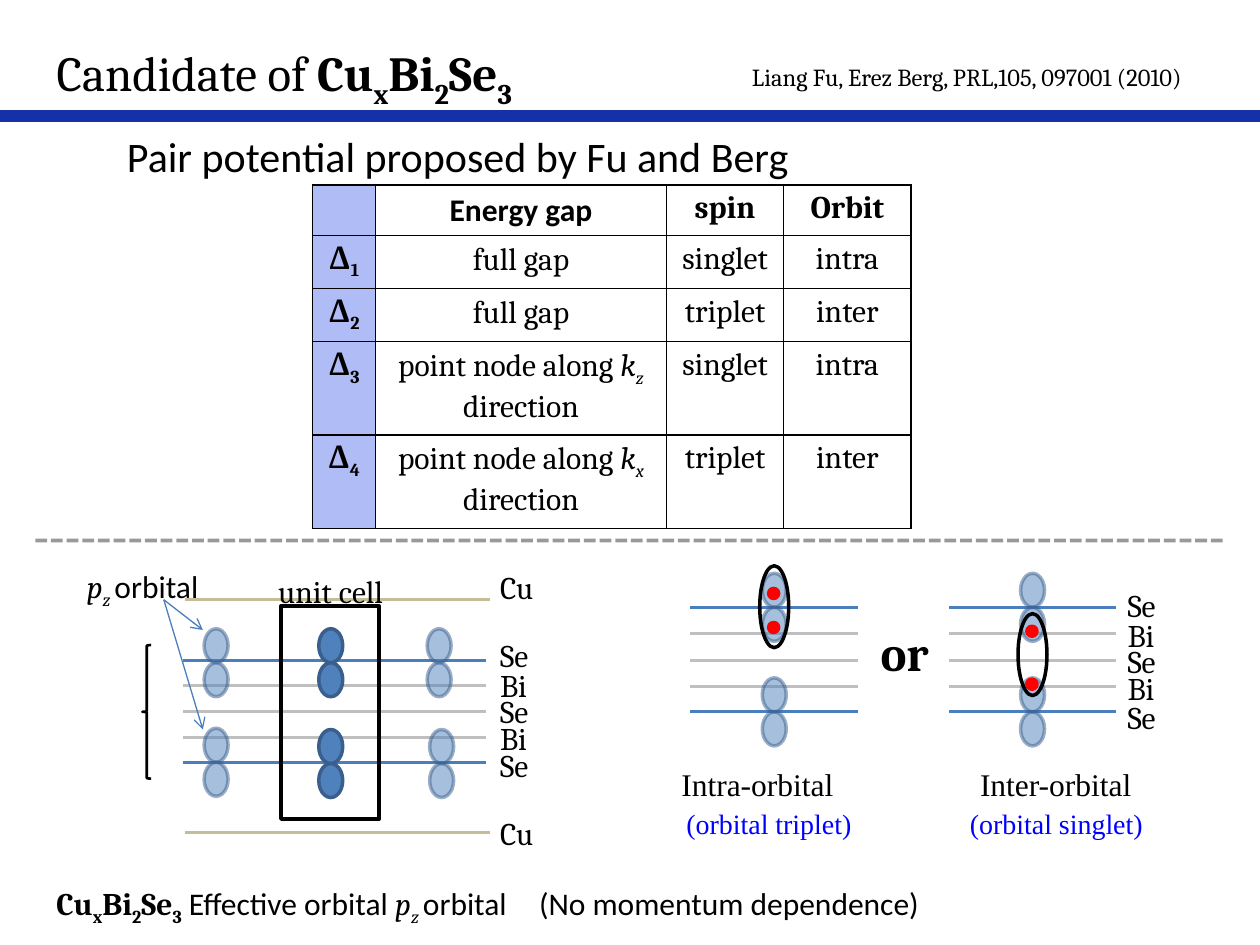
from lxml import etree
from pptx import Presentation
from pptx.dml.color import RGBColor
from pptx.enum.dml import MSO_LINE
from pptx.enum.shapes import MSO_CONNECTOR, MSO_SHAPE
from pptx.enum.text import MSO_ANCHOR, MSO_AUTO_SIZE, PP_ALIGN
from pptx.oxml.ns import qn
from pptx.util import Inches, Pt

STRAIGHT = MSO_CONNECTOR.STRAIGHT
OVAL, RECT, BRACE = MSO_SHAPE.OVAL, MSO_SHAPE.RECTANGLE, MSO_SHAPE.LEFT_BRACE
DASH = MSO_LINE.SQUARE_DOT
TOP, FIT = MSO_ANCHOR.TOP, MSO_AUTO_SIZE.SHAPE_TO_FIT_TEXT
LEFT, CENTER = PP_ALIGN.LEFT, PP_ALIGN.CENTER

COLORS = {
    "black": "000000", "bar": "1531A7", "head": "2247E4", "tan": "C4BD97",
    "gray": "BFBFBF", "blue": "4B7EBC", "lobe": "4F81BD", "edge": "3A5F8C",
    "red": "FF0000", "note": "0000FF", "dash": "404040",
}
SERIF, SANS, TIMES = "Cambria", "Calibri", "Times New Roman"

# A run is (text, style, font): b bold, i italic, s subscript
CRYSTAL = [("Cu", "b"), ("x", "bs"), ("Bi", "b"), ("2", "bs"), ("Se", "b"), ("3", "bs")]
PZ = [("p", "i"), ("z ", "is"), ("orbital", "", SANS)]
GAPS = [
    [("full gap",)],
    [("full gap",)],
    [("point node along ",), ("k", "i"), ("z ", "is"), ("direction",)],
    [("point node along ",), ("k", "i"), ("x ", "is"), ("direction",)],
]
KINDS = [("singlet", "intra"), ("triplet", "inter")] * 2


def rgb(name):
    return RGBColor.from_string(COLORS[name])


def fade(props, alpha):
    """Make every colour below the given properties see-through."""
    for clr in props.iter(qn("a:srgbClr")):
        etree.SubElement(clr, qn("a:alpha")).set("val", str(alpha * 1000))


def write(para, runs, size=18, color="black", font=SERIF):
    for text, *rest in runs:
        style = rest[0] if rest else ""
        run = para.add_run()
        run.text = text
        run.font.name = rest[1] if len(rest) > 1 else font
        run.font.size = Pt(size)
        run.font.bold, run.font.italic = "b" in style, "i" in style
        run.font.color.rgb = rgb(color)
        if "s" in style:
            run._r.get_or_add_rPr().set("baseline", "-25000")


def add_text(slide, box, runs, wrap=True, **look):
    frame = slide.shapes.add_textbox(*map(Inches, box)).text_frame
    frame.word_wrap = wrap
    frame.auto_size = FIT
    write(frame.paragraphs[0], runs, **look)
    return frame.paragraphs[0]


def add_line(slide, start, end, color, width=1.75):
    line = slide.shapes.add_connector(STRAIGHT, *map(Inches, start + end))
    line.line.color.rgb = rgb(color)
    line.line.width = Pt(width)
    etree.SubElement(line._element.spPr, qn("a:effectLst"))
    return line


def add_arrow(slide, start, end):
    arrow = add_line(slide, start, end, "blue", 0.75)
    etree.SubElement(arrow.line._get_or_add_ln(), qn("a:tailEnd")).set("type", "arrow")


def add_form(slide, kind, box, fill=None, edge="black", width=2):
    form = slide.shapes.add_shape(kind, *map(Inches, box))
    form.shadow.inherit = False
    if fill:
        form.fill.solid()
        form.fill.fore_color.rgb = rgb(fill)
    else:
        form.fill.background()
    form.line.color.rgb = rgb(edge)
    form.line.width = Pt(width)
    return form


def add_pair(slide, x, y, faint=True):
    """Two stacked lobes of one pz orbital."""
    for top in (y, y + 0.27):
        lobe = add_form(slide, OVAL, (x, top, 0.19, 0.27), "lobe", "edge")
        if faint:
            fade(lobe._element.spPr, 50)


def add_planes(slide, left, right, levels):
    """Five layers, with the outer two in blue."""
    for i, y in enumerate(levels):
        add_line(slide, (left, y), (right, y), "blue" if i in (0, 4) else "gray")


def add_names(slide, x, tops):
    for name, y in zip(("Se", "Bi", "Se", "Bi", "Se"), tops):
        add_text(slide, (x, y, 0.85, 0.4), [(name,)])


def fill_cell(cell, runs, tint, tight):
    if tight:
        cell.margin_top = cell.margin_bottom = Inches(0.04)
    if tint:
        cell.fill.solid()
        cell.fill.fore_color.rgb = rgb("head")
    else:
        cell.fill.background()
    props = cell._tc.get_or_add_tcPr()
    fade(props, 36)
    for i, side in enumerate(("lnL", "lnR", "lnT", "lnB")):
        edge = etree.Element(qn("a:" + side), w=str(Pt(1)))
        paint = etree.SubElement(edge, qn("a:solidFill"))
        etree.SubElement(paint, qn("a:srgbClr")).set("val", COLORS["black"])
        props.insert(i, edge)
    para = cell.text_frame.paragraphs[0]
    para.alignment = CENTER
    write(para, runs)


def add_grid(slide):
    rows = [[[], [("Energy gap", "b", SANS)], [("spin", "b")], [("Orbit", "b")]]]
    for i, (gap, (spin, orbit)) in enumerate(zip(GAPS, KINDS), 1):
        rows.append([[("Δ", "b"), (str(i), "bs")], gap, [(spin,)], [(orbit,)]])
    box = map(Inches, (2.48, 1.47, 4.75, 1.86))
    table = slide.shapes.add_table(5, 4, *box).table
    table.first_row = table.horz_banding = False
    for col, width in zip(table.columns, (0.5, 2.31, 0.93, 1.01)):
        col.width = Inches(width)
    for row, height in zip(table.rows, (0.38, 0.38, 0.37, 0.37, 0.36)):
        row.height = Inches(height)
    for r, row in enumerate(rows):
        for c, runs in enumerate(row):
            fill_cell(table.cell(r, c), runs, c == 0, c != 1)


def add_title(slide):
    title = slide.shapes.title
    title.left, title.top, title.width, title.height = map(Inches, (0.35, 0.29, 4.49, 0.57))
    frame = title.text_frame
    frame.vertical_anchor = TOP
    frame.auto_size = FIT
    frame.paragraphs[0].alignment = LEFT
    write(frame.paragraphs[0], [("Candidate of ",)] + CRYSTAL, size=28)


def add_cell(slide):
    """Left side: layers around the unit cell."""
    for y, top in ((4.76, 4.46), (6.61, 6.41)):
        add_line(slide, (1.47, y), (3.89, y), "tan")
        add_text(slide, (3.87, top, 0.89, 0.4), [("Cu",)])
    add_text(slide, (2.11, 4.49, 1.1, 0.35), [("unit cell",)])
    add_planes(slide, 1.45, 3.86, (5.24, 5.44, 5.65, 5.85, 6.05))
    for y in (4.99, 5.79):
        add_pair(slide, 2.53, y, faint=False)
    add_form(slide, RECT, (2.23, 4.81, 0.78, 1.69))
    add_names(slide, 3.87, (5, 5.24, 5.44, 5.66, 5.87))
    for x, y in ((1.62, 4.99), (3.39, 4.99), (3.41, 5.79), (1.62, 5.78)):
        add_pair(slide, x, y)
    add_form(slide, BRACE, (1.13, 5.12, 0.07, 1.06), width=1.5)
    add_text(slide, (0.59, 4.45, 1.65, 0.4), PZ)
    for y in (5, 5.79):
        add_arrow(slide, (1.3, 4.76), (1.61, y))


def add_case(slide, left, x, ring, dots):
    """Right side: one way of pairing two electrons."""
    add_planes(slide, left, left + 1.33, (4.82, 5.03, 5.24, 5.45, 5.65))
    for y in (4.55, 5.38):
        add_pair(slide, x, y)
    for y in dots:
        add_form(slide, OVAL, (x + 0.05, y, 0.08, 0.08), "red", "red")
    add_form(slide, OVAL, (x - 0.02, ring, 0.23, 0.65))


def main():
    deck = Presentation()
    deck.slide_width, deck.slide_height = Inches(10), Inches(7.5)
    slide = deck.slides.add_slide(deck.slide_layouts[5])

    # Heading
    add_line(slide, (0, 0.92), (10, 0.92), "bar", 6.75)
    add_title(slide)
    add_text(slide, (5.87, 0.44, 3.86, 0.34),
             [("Liang Fu, Erez Berg, PRL,105, 097001 (2010)",)], size=14)

    # Pair potentials
    add_text(slide, (0.91, 0.99, 8.66, 0.5),
             [("Pair potential proposed by Fu and Berg",)], size=24, font=SANS)
    add_grid(slide)
    rule = add_line(slide, (0.28, 4.29), (9.72, 4.29), "dash", 2.25)
    rule.line.dash_style = DASH
    fade(rule._element.spPr, 52)

    # Crystal and the two pairings
    add_cell(slide)
    add_case(slide, 5.48, 6.05, 4.49, (4.67, 4.94))
    add_case(slide, 7.53, 8.1, 4.87, (4.97, 5.39))
    add_text(slide, (6.89, 4.89, 0.61, 0.59), [("or", "b")], size=28)
    add_names(slide, 8.85, (4.6, 4.84, 5.05, 5.26, 5.49))
    for x, name, left, width, note in (
            (5.31, "Intra-orbital", 5.35, 1.54, "(orbital triplet)"),
            (7.68, "Inter-orbital", 7.6, 1.6, "(orbital singlet)")):
        add_text(slide, (x, 6.02, 1.97, 0.4), [(name,)], font=TIMES)
        add_text(slide, (left, 6.35, width, 0.37), [(note,)], wrap=False,
                 size=16, color="note", font=TIMES)

    # Closing line, with a tab stop before the remark
    close = [(" Effective orbital ", "", SANS)] + PZ + [("\t(No momentum dependence)", "", SANS)]
    para = add_text(slide, (0.35, 6.97, 9.37, 0.4), CRYSTAL + close)
    stops = etree.SubElement(para._p.get_or_add_pPr(), qn("a:tabLst"))
    etree.SubElement(stops, qn("a:tab"), pos=str(Inches(3.83)), algn="l")

    deck.save("out.pptx")


if __name__ == "__main__":
    main()
